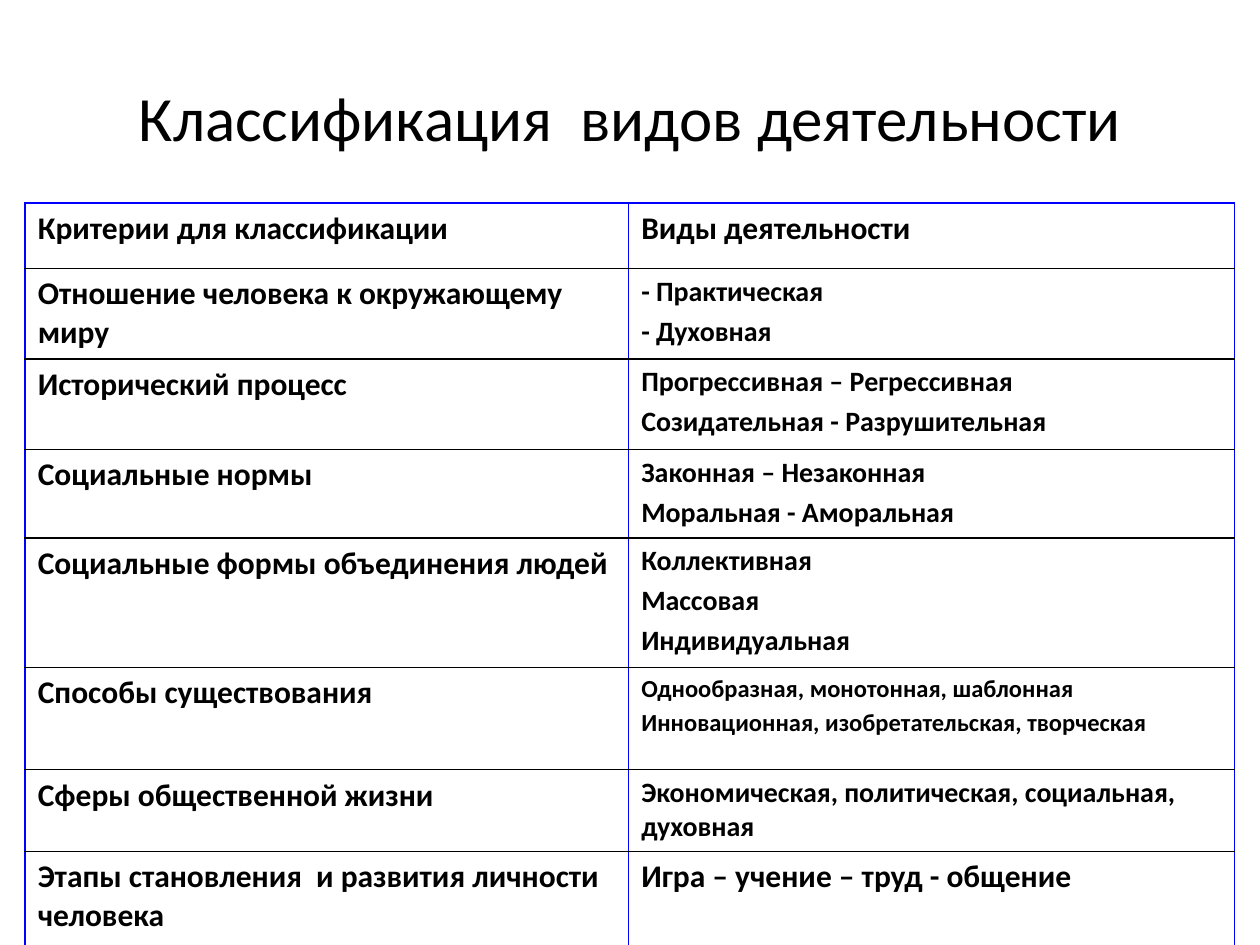
from dataclasses import dataclass

from lxml import etree
from pptx import Presentation
from pptx.dml.color import RGBColor
from pptx.enum.text import MSO_ANCHOR, PP_ALIGN
from pptx.oxml.ns import qn
from pptx.util import Inches, Pt

CENTER, LEFT = PP_ALIGN.CENTER, PP_ALIGN.LEFT
MIDDLE, TOP = MSO_ANCHOR.MIDDLE, MSO_ANCHOR.TOP


@dataclass(frozen=True)
class Theme:
    font: str = "Calibri"
    ink: str = "000000"
    edge: str = "0000FF"
    title: int = 36
    large: int = 18
    mid: int = 16
    small: int = 14


theme = Theme()


def write(frame, text, size, bold=False, align=LEFT, anchor=TOP):
    """Put each line of text in its own paragraph, 20% of the size apart."""
    frame.word_wrap = True
    frame.vertical_anchor = anchor
    for i, line in enumerate(text.split("\n")):
        para = frame.paragraphs[0] if i == 0 else frame.add_paragraph()
        para.alignment = align
        if i:
            para.space_before = Pt(size * 0.2)
        run = para.add_run()
        run.text = line
        run.font.name = theme.font
        run.font.size = Pt(size)
        run.font.bold = bold
        run.font.color.rgb = RGBColor.from_string(theme.ink)


def border(cell, colors):
    """Draw 1 pt cell edges; colors maps a side (L, R, T, B) to a colour."""
    props = cell._tc.get_or_add_tcPr()
    for i, (side, color) in enumerate(colors.items()):
        line = etree.Element(qn(f"a:ln{side}"), w=str(Pt(1)))
        fill = etree.SubElement(line, qn("a:solidFill"))
        etree.SubElement(fill, qn("a:srgbClr"), val=color)
        props.insert(i, line)


prs = Presentation()
prs.slide_width, prs.slide_height = Inches(10), Inches(7.5)
slide = prs.slides.add_slide(prs.slide_layouts[6])

title = slide.shapes.add_textbox(Inches(0.5), Inches(0.3), Inches(9), Inches(1.25))
write(title.text_frame, "Классификация  видов деятельности", theme.title,
      align=CENTER, anchor=MIDDLE)

# row height, criterion, kinds, size of the kinds
rows = [
    (0.52, "Критерии для классификации", "Виды деятельности", theme.large),
    (0.72, "Отношение человека к окружающему миру",
     "- Практическая\n- Духовная", theme.mid),
    (0.72, "Исторический процесс",
     "Прогрессивная – Регрессивная\nСозидательная - Разрушительная", theme.mid),
    (0.7, "Социальные нормы",
     "Законная – Незаконная\nМоральная - Аморальная", theme.mid),
    (1.03, "Социальные формы объединения людей",
     "Коллективная\nМассовая\nИндивидуальная", theme.mid),
    (0.81, "Способы существования",
     "Однообразная, монотонная, шаблонная\n"
     "Инновационная, изобретательская, творческая", theme.small),
    (0.65, "Сферы общественной жизни",
     "Экономическая, политическая, социальная, духовная", theme.mid),
    (0.75, "Этапы становления  и развития личности человека",
     "Игра – учение – труд - общение", theme.large),
]
widths = [4.79, 4.81]

table = slide.shapes.add_table(len(rows), len(widths), Inches(0.2), Inches(1.61),
                               Inches(sum(widths)),
                               Inches(sum(row[0] for row in rows))).table
table.first_row = table.horz_banding = False
for col, width in zip(table.columns, widths):
    col.width = Inches(width)

last = len(rows) - 1
for r, (height, label, kinds, size) in enumerate(rows):
    table.rows[r].height = Inches(height)
    sides = {
        "L": theme.edge,
        "R": theme.edge,
        "T": theme.edge if r == 0 else theme.ink,
        "B": theme.edge if r == last else theme.ink,
    }
    for c, (text, points) in enumerate([(label, theme.large), (kinds, size)]):
        cell = table.cell(r, c)
        cell.fill.background()
        border(cell, sides)
        write(cell.text_frame, text, points, bold=True)

prs.save("out.pptx")
